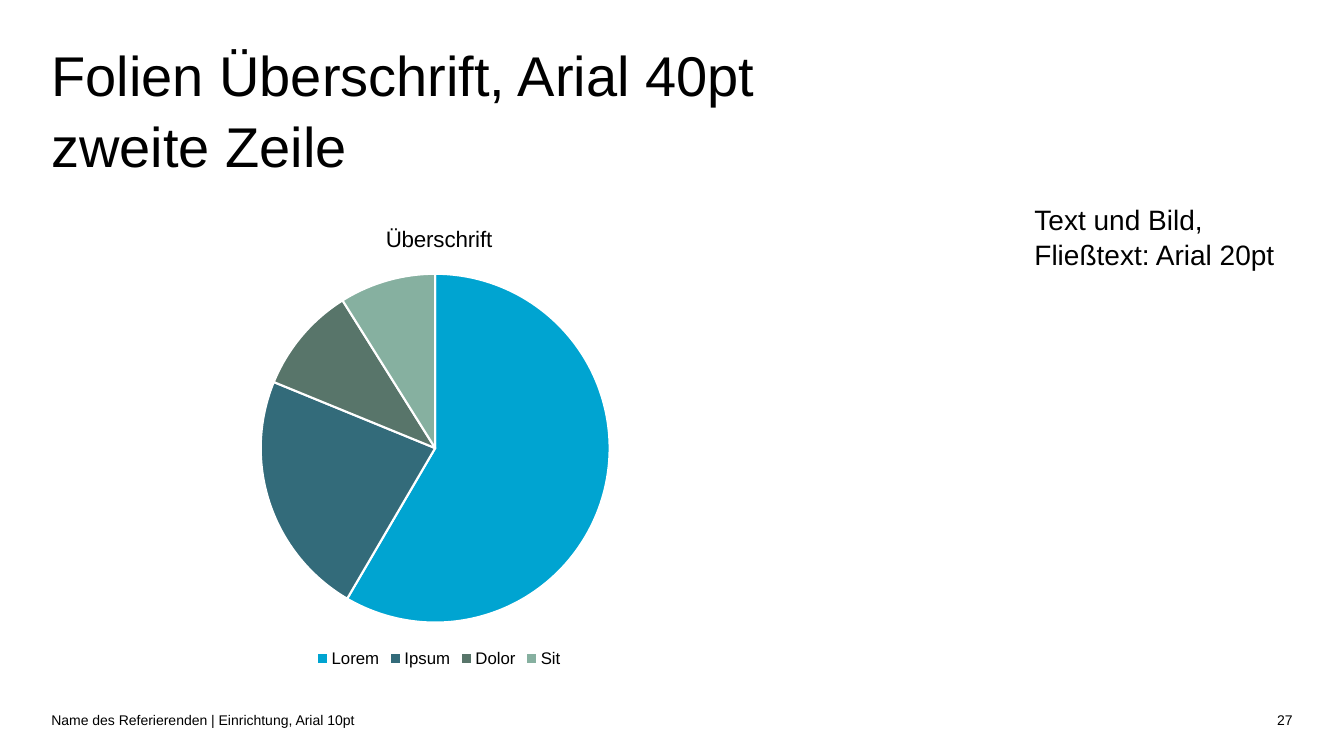
import pptx
import pptx.chart.data
import pptx.dml.color
import pptx.enum.chart
import pptx.enum.text
import pptx.oxml
import pptx.oxml.ns
import pptx.util

Inches = pptx.util.Inches
RGBColor = pptx.dml.color.RGBColor
Anchor = pptx.enum.text.MSO_ANCHOR
Align = pptx.enum.text.PP_ALIGN

BLACK = RGBColor(0x00, 0x00, 0x00)
WHITE = RGBColor(0xFF, 0xFF, 0xFF)
BLUE = RGBColor(0x00, 0xA4, 0xD1)
PETROL = RGBColor(0x33, 0x6B, 0x7A)
MOSS = RGBColor(0x58, 0x75, 0x6A)
SAGE = RGBColor(0x86, 0xB0, 0xA0)

LEFT = 0.51
FOOTER_TOP = 6.99
FOOTER_HEIGHT = 0.31
PIE_FRAME = {"x": 0.27, "y": 0.14, "w": 0.45, "h": 0.76}


class SlideBuilder:
    font_name = "Arial"

    def __init__(self, page):
        self.page = page

    def style_font(self, font, size):
        font.name = self.font_name
        font.size = pptx.util.Pt(size)
        font.bold = False
        font.color.rgb = BLACK

    def add_text(self, text, place, size, anchor=Anchor.TOP, align=Align.LEFT, spacing=1.0):
        box = self.page.shapes.add_textbox(*map(Inches, place))
        frame = box.text_frame
        frame.word_wrap = True
        frame.vertical_anchor = anchor
        frame.margin_left = frame.margin_right = Inches(0)
        frame.margin_top = frame.margin_bottom = Inches(0)
        para = frame.paragraphs[0]
        para.text = text
        para.alignment = align
        para.line_spacing = spacing
        self.style_font(para.font, size)

    def add_pie(self, title, slices, place):
        data = pptx.chart.data.CategoryChartData()
        data.categories = [name for name, value, color in slices]
        data.add_series("Series 1", [value for name, value, color in slices])
        chart = self.page.shapes.add_chart(
            pptx.enum.chart.XL_CHART_TYPE.PIE, *map(Inches, place), data
        ).chart
        self.style_font(chart.font, 10)

        chart.has_title = True
        heading = chart.chart_title.text_frame.paragraphs[0]
        heading.text = title
        self.style_font(heading.font, 16)

        chart.has_legend = True
        chart.legend.position = pptx.enum.chart.XL_LEGEND_POSITION.BOTTOM
        chart.legend.include_in_layout = False
        self.style_font(chart.legend.font, 12)

        plot = chart.plots[0]
        plot.vary_by_categories = True
        for index, (name, value, color) in enumerate(slices):
            style = plot.series[0].points[index].format
            style.fill.solid()
            style.fill.fore_color.rgb = color
            style.line.color.rgb = WHITE
            style.line.width = pptx.util.Pt(1.5)
        self.place_plot(chart)

    def place_plot(self, chart):
        qn = pptx.oxml.ns.qn
        area = chart.element.find(".//" + qn("c:plotArea"))
        for layout in area.findall(qn("c:layout")):
            area.remove(layout)
        modes = '<c:layoutTarget val="inner"/><c:xMode val="edge"/><c:yMode val="edge"/>'
        sizes = "".join(f'<c:{key} val="{value}"/>' for key, value in PIE_FRAME.items())
        namespace = pptx.oxml.ns.nsdecls("c")
        area.insert(0, pptx.oxml.parse_xml(
            f"<c:layout {namespace}><c:manualLayout>{modes}{sizes}</c:manualLayout></c:layout>"
        ))


def main():
    deck = pptx.Presentation()
    deck.slide_width = Inches(13.33)
    deck.slide_height = Inches(7.5)
    builder = SlideBuilder(deck.slides.add_slide(deck.slide_layouts[6]))

    builder.add_text(
        "Folien Überschrift, Arial 40pt\vzweite Zeile", (LEFT, 0.37, 8.9, 1.18), 40, spacing=1.05
    )
    builder.add_pie(
        "Überschrift",
        [("Lorem", 59, BLUE), ("Ipsum", 23, PETROL), ("Dolor", 10, MOSS), ("Sit", 9, SAGE)],
        (LEFT, 2.05, 7.69, 4.61),
    )
    builder.add_text(
        "Text und Bild, Fließtext: Arial 20pt", (10.26, 2, 2.57, 4.66), 20, spacing=1.03
    )
    builder.add_text(
        "Name des Referierenden | Einrichtung, Arial 10pt",
        (LEFT, FOOTER_TOP, 10.77, FOOTER_HEIGHT), 10, Anchor.MIDDLE,
    )
    builder.add_text(
        "27", (11.28, FOOTER_TOP, 1.54, FOOTER_HEIGHT), 10, Anchor.MIDDLE, Align.RIGHT
    )
    deck.save("out.pptx")


if __name__ == "__main__":
    main()
